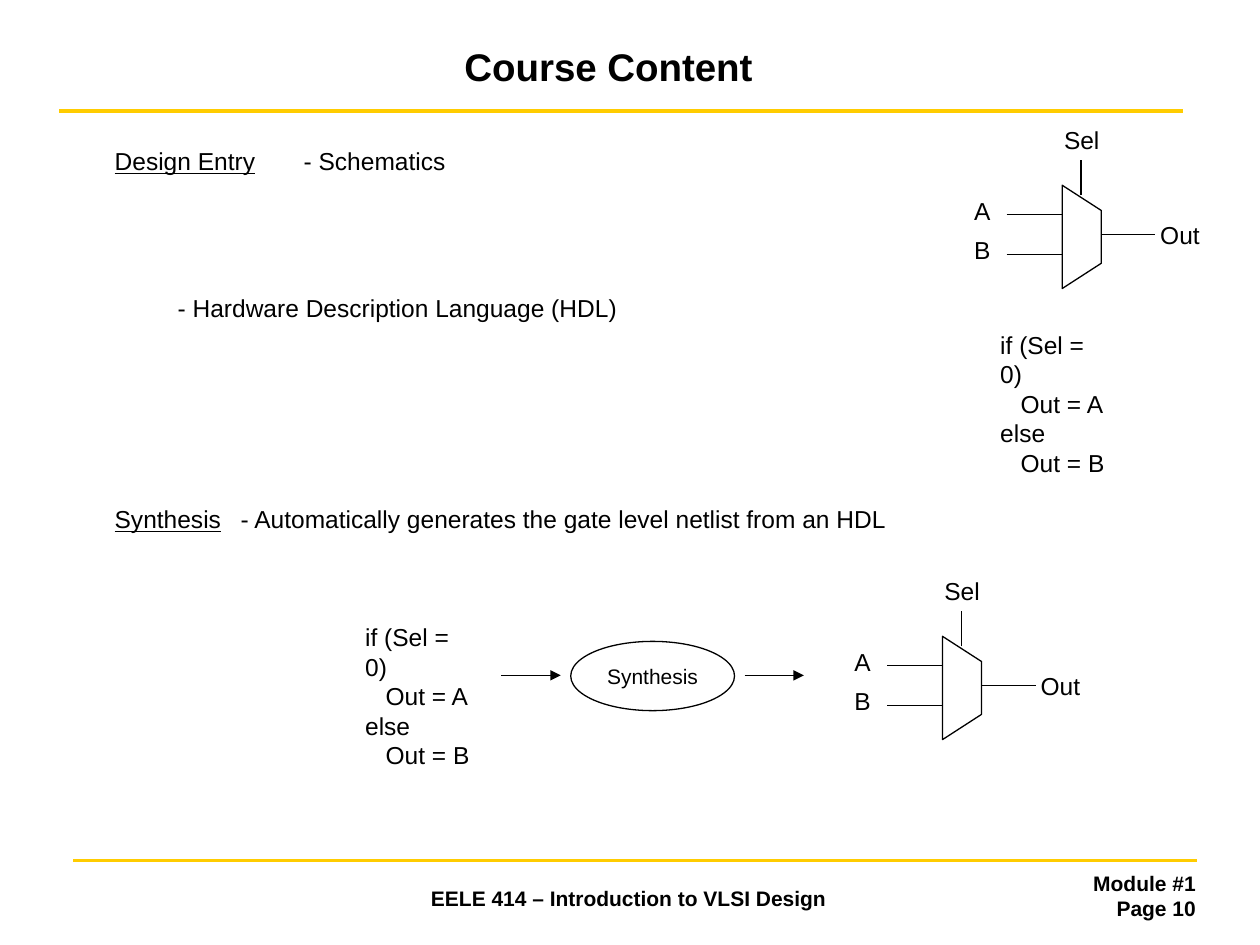
from dataclasses import dataclass
from typing import Any

from pptx import Presentation
from pptx import util as u
from pptx.dml.color import RGBColor
from pptx.enum import shapes, text
from pptx.oxml.ns import qn
from lxml import etree

HUE = {"ink": "000000", "gold": "FFCC00"}
FACE = "Arial"
LEFT, MID, RIGHT = text.PP_ALIGN.LEFT, text.PP_ALIGN.CENTER, text.PP_ALIGN.RIGHT
CODE = "if (Sel = 0)\n   Out = A\nelse\n   Out = B"


@dataclass
class Wire:
    x1: float
    y1: float
    x2: float
    y2: float
    hue: str = "ink"
    width: float = 0.75
    arrow: bool = False


@dataclass
class Label:
    words: str
    x: float
    y: float
    w: float = 0.39
    h: float = 0.24
    size: int = 14
    bold: bool = False
    align: Any = MID
    pad: float = 0
    anchor: Any = text.MSO_ANCHOR.MIDDLE


@dataclass
class Entry:
    head: str
    point: str
    tab: float
    gap: float


MUX_EDGE = [(0.83, 1.3), (1.14, 1.1), (1.14, 0.68), (0.83, 0.48)]
MUX_WIRES = [
    (0.39, 0.71, 0.83, 0.71),
    (0.39, 1.03, 0.83, 1.03),
    (1.14, 0.87, 1.57, 0.87),
    (0.98, 0.56, 0.98, 0.28),
]
MUX_PINS = [("A", 0, 0.56), ("B", 0, 0.87), ("Out", 1.57, 0.75), ("Sel", 0.79, 0)]

ENTRIES = [
    Entry("Design Entry", "- Schematics", 3, 0),
    Entry("", "- Hardware Description Language (HDL)", 3, 67),
    Entry("Synthesis", "- Automatically generates the gate level netlist from an HDL", 2, 104),
]


def tint(name: str) -> RGBColor:
    return RGBColor.from_string(HUE[name])


def style(font: Any, size: int, bold: bool = False) -> None:
    font.name, font.size, font.bold = FACE, u.Pt(size), bold
    font.color.rgb = tint("ink")


def place(shape: Any, x: float, y: float, w: float, h: float) -> None:
    shape.left, shape.top = u.Inches(x), u.Inches(y)
    shape.width, shape.height = u.Inches(w), u.Inches(h)


def outline(shape: Any) -> None:
    shape.shadow.inherit = False
    shape.fill.background()
    shape.line.color.rgb = tint("ink")
    shape.line.width = u.Pt(0.75)


def draw_wire(slide: Any, wire: Wire) -> None:
    ends = [u.Inches(v) for v in (wire.x1, wire.y1, wire.x2, wire.y2)]
    link = slide.shapes.add_connector(shapes.MSO_CONNECTOR.STRAIGHT, *ends)
    link.line.color.rgb = tint(wire.hue)
    link.line.width = u.Pt(wire.width)
    if wire.arrow:
        etree.SubElement(link.line._get_or_add_ln(), qn("a:tailEnd"), type="triangle")
    etree.SubElement(link._element.spPr, qn("a:effectLst"))


def draw_label(slide: Any, label: Label) -> None:
    box = slide.shapes.add_textbox(0, 0, 0, 0)
    place(box, label.x, label.y, label.w, label.h)
    frame = box.text_frame
    frame.word_wrap = True
    frame.vertical_anchor = label.anchor
    frame.margin_left = frame.margin_right = u.Inches(label.pad)
    frame.margin_top = frame.margin_bottom = u.Inches(label.pad / 2)
    frame.text = label.words
    for para in frame.paragraphs:
        para.alignment = label.align
        style(para.font, label.size, label.bold)


def draw_code(slide: Any, x: float, y: float) -> None:
    draw_label(slide, Label(CODE, x, y, 1.07, 1.03, align=LEFT, pad=0.1,
                            anchor=text.MSO_ANCHOR.TOP))


def draw_mux(slide: Any, x: float, y: float) -> None:
    edge = [(u.Inches(x + dx), u.Inches(y + dy)) for dx, dy in MUX_EDGE]
    pen = slide.shapes.build_freeform(*edge[0])
    pen.add_line_segments(edge[1:], close=True)
    outline(pen.convert_to_shape())
    for x1, y1, x2, y2 in MUX_WIRES:
        draw_wire(slide, Wire(x + x1, y + y1, x + x2, y + y2))
    for name, dx, dy in MUX_PINS:
        draw_label(slide, Label(name, x + dx, y + dy))


def draw_oval(slide: Any) -> None:
    oval = slide.shapes.add_shape(shapes.MSO_SHAPE.OVAL, 0, 0, 0, 0)
    place(oval, 4.53, 5.09, 1.3, 0.55)
    outline(oval)
    frame = oval.text_frame
    frame.word_wrap = False
    frame.vertical_anchor = text.MSO_ANCHOR.MIDDLE
    frame.text = "Synthesis"
    para = frame.paragraphs[0]
    para.alignment = MID
    style(para.font, 12)


def fill_title(title: Any) -> None:
    place(title, 0.58, 0.25, 8.5, 0.55)
    frame = title.text_frame
    frame.text = "Course Content"
    frame.auto_size = text.MSO_AUTO_SIZE.NONE
    frame.vertical_anchor = text.MSO_ANCHOR.MIDDLE
    frame.paragraphs[0].alignment = MID
    style(frame.paragraphs[0].font, 22, True)


def fill_body(body: Any) -> None:
    place(body, 0.43, 1.11, 9.25, 5.55)
    frame = body.text_frame
    frame.auto_size = text.MSO_AUTO_SIZE.NONE
    frame.margin_left = u.Inches(0.48)
    for i, entry in enumerate(ENTRIES):
        para = frame.add_paragraph() if i else frame.paragraphs[0]
        props = para._p.get_or_add_pPr()
        props.set("marL", "0")
        props.set("indent", "0")
        etree.SubElement(props, qn("a:buNone"))
        tabs = etree.SubElement(props, qn("a:tabLst"))
        etree.SubElement(tabs, qn("a:tab"), pos=str(u.Inches(entry.tab)), algn="l")
        para.space_before = u.Pt(entry.gap)
        style(para.font, 14)
        if entry.head:
            head = para.add_run()
            head.text = entry.head
            head.font.underline = True
        para.add_run().text = "\t" + entry.point


def main() -> None:
    deck = Presentation()
    deck.slide_width, deck.slide_height = u.Inches(10), u.Inches(7.5)
    slide = deck.slides.add_slide(deck.slide_layouts[1])
    fill_title(slide.shapes.title)
    fill_body(slide.placeholders[1])

    draw_wire(slide, Wire(0.47, 0.88, 9.39, 0.88, "gold", 2))
    draw_wire(slide, Wire(0.58, 6.83, 9.5, 6.83, "gold", 2))
    draw_label(slide, Label("Module #1\nPage 10", 8.03, 6.86, 1.56, 0.5, 12, True, RIGHT, 0.1))
    draw_label(slide, Label("EELE 414 – Introduction to VLSI Design",
                            2.68, 6.97, 4.62, 0.32, 12, True, pad=0.1))

    draw_mux(slide, 7.6, 0.99)
    draw_code(slide, 7.84, 2.57)

    draw_code(slide, 2.8, 4.89)
    draw_oval(slide)
    for x in (3.98, 5.91):
        draw_wire(slide, Wire(x, 5.36, x + 0.47, 5.36, arrow=True))
    draw_mux(slide, 6.65, 4.57)

    deck.save("out.pptx")


if __name__ == "__main__":
    main()
